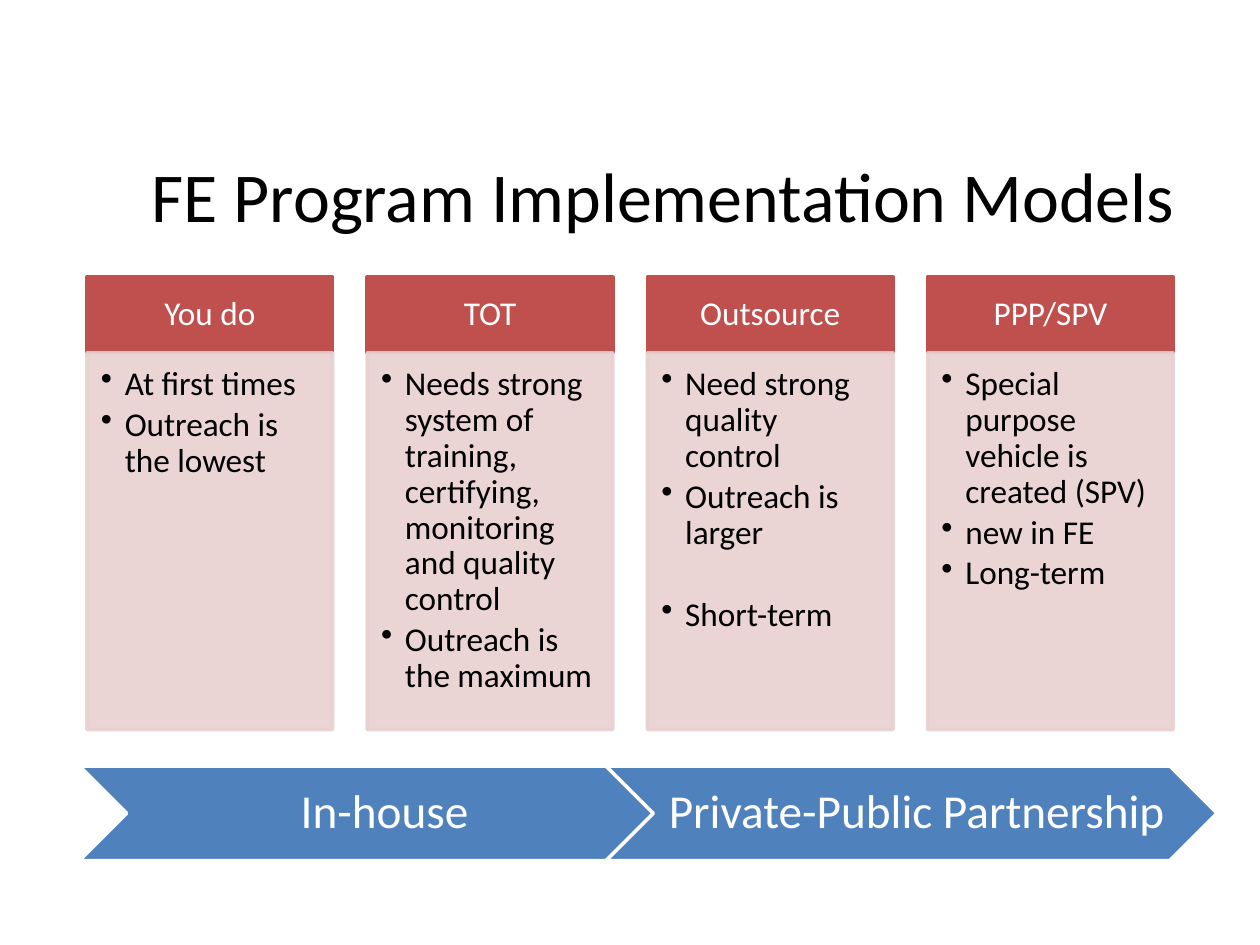
from dataclasses import dataclass

from lxml import etree
from pptx import Presentation
from pptx import util as u
from pptx.dml import color
from pptx.enum import shapes, text
from pptx.oxml import ns

FONT = "Calibri"
RED, PINK, BLUE = "C0504D", "E8D0D0", "4F81BD"
BLACK, WHITE = "000000", "FFFFFF"


@dataclass
class Bullet:
    words: str
    before: float = 0


@dataclass
class Model:
    name: str
    bullets: list[Bullet]


MODELS = [
    Model("You do", [Bullet("At first times"), Bullet("Outreach is the lowest")]),
    Model("TOT", [
        Bullet("Needs strong system of training, certifying, monitoring and quality control"),
        Bullet("Outreach is the maximum"),
    ]),
    Model("Outsource", [
        Bullet("Need strong quality control"),
        Bullet("Outreach is larger"),
        Bullet("Short-term", 23.5),
    ]),
    Model("PPP/SPV", [
        Bullet("Special purpose vehicle is created (SPV)"),
        Bullet("new in FE"),
        Bullet("Long-term"),
    ]),
]
STAGES = ["In-house ", "Private-Public Partnership"]


def rgb(value: str) -> color.RGBColor:
    return color.RGBColor.from_string(value)


def add_span(para, words: str, size: float, ink: str) -> None:
    span = para.add_run()
    span.text = words
    span.font.name = FONT
    span.font.size = u.Pt(size)
    span.font.color.rgb = rgb(ink)


def add_block(page, kind, place: tuple, fill: str, line: str, insets: tuple):
    block = page.shapes.add_shape(kind, *map(u.Inches, place))
    block.shadow.inherit = False
    block.fill.solid()
    block.fill.fore_color.rgb = rgb(fill)
    block.line.color.rgb = rgb(line)
    block.line.width = u.Pt(2)
    frame = block.text_frame
    frame.word_wrap = True
    frame.vertical_anchor = text.MSO_ANCHOR.MIDDLE
    frame.margin_left, frame.margin_top, frame.margin_right, frame.margin_bottom = map(
        u.Inches, insets
    )
    return block


def add_label(block, words: str, size: float) -> None:
    para = block.text_frame.paragraphs[0]
    para.alignment = text.PP_ALIGN.CENTER
    para.line_spacing = 0.9
    add_span(para, words, size, WHITE)


def set_opacity(block, percent: int) -> None:
    for tint in block._element.spPr.iter(ns.qn("a:srgbClr")):
        etree.SubElement(tint, ns.qn("a:alpha"), val=str(percent * 1000))


def add_bullets(frame, bullets: list[Bullet]) -> None:
    frame.vertical_anchor = text.MSO_ANCHOR.TOP
    for index, bullet in enumerate(bullets):
        para = frame.add_paragraph() if index else frame.paragraphs[0]
        props = para._p.get_or_add_pPr()
        props.set("marL", str(u.Inches(0.19)))
        props.set("indent", str(u.Inches(-0.19)))
        etree.SubElement(props, ns.qn("a:buChar"), char="•")
        para.level = 1
        para.alignment = text.PP_ALIGN.LEFT
        para.line_spacing = 0.9
        para.space_after = u.Pt(2.85)
        if bullet.before:
            para.space_before = u.Pt(bullet.before)
        add_span(para, bullet.words, 19, BLACK)


def add_title(page, words: str) -> None:
    title = page.shapes.title
    title.left, title.top, title.width, title.height = map(u.Inches, (0.42, 0.92, 9, 1.25))
    title.text_frame.vertical_anchor = text.MSO_ANCHOR.MIDDLE
    para = title.text_frame.paragraphs[0]
    para.alignment = text.PP_ALIGN.RIGHT
    add_span(para, words, 40, BLACK)


def add_model(page, model: Model, left: float) -> None:
    kind = shapes.MSO_SHAPE.RECTANGLE
    header = add_block(page, kind, (left, 2.2, 1.95, 0.6), RED, RED, (0.15, 0.08, 0.15, 0.08))
    add_label(header, model.name, 19)
    body = add_block(page, kind, (left, 2.8, 1.95, 2.99), PINK, PINK, (0.11, 0.11, 0.15, 0.17))
    set_opacity(body, 90)
    add_bullets(body.text_frame, model.bullets)


def add_stage(page, words: str, left: float) -> None:
    arrow = add_block(page, shapes.MSO_SHAPE.CHEVRON, (left, 6.08, 4.85, 0.75),
                      BLUE, WHITE, (0.12, 0.04, 0.04, 0.04))
    add_label(arrow, words, 27)


def main() -> None:
    deck = Presentation()
    deck.slide_width, deck.slide_height = u.Inches(10), u.Inches(7.5)
    page = deck.slides.add_slide(deck.slide_layouts[5])
    add_title(page, "FE Program Implementation Models")
    for index, model in enumerate(MODELS):
        add_model(page, model, 0.69 + index * 2.224)
    for index, stage in enumerate(STAGES):
        add_stage(page, stage, 0.63 + index * 4.18)
    deck.save("out.pptx")


if __name__ == "__main__":
    main()
